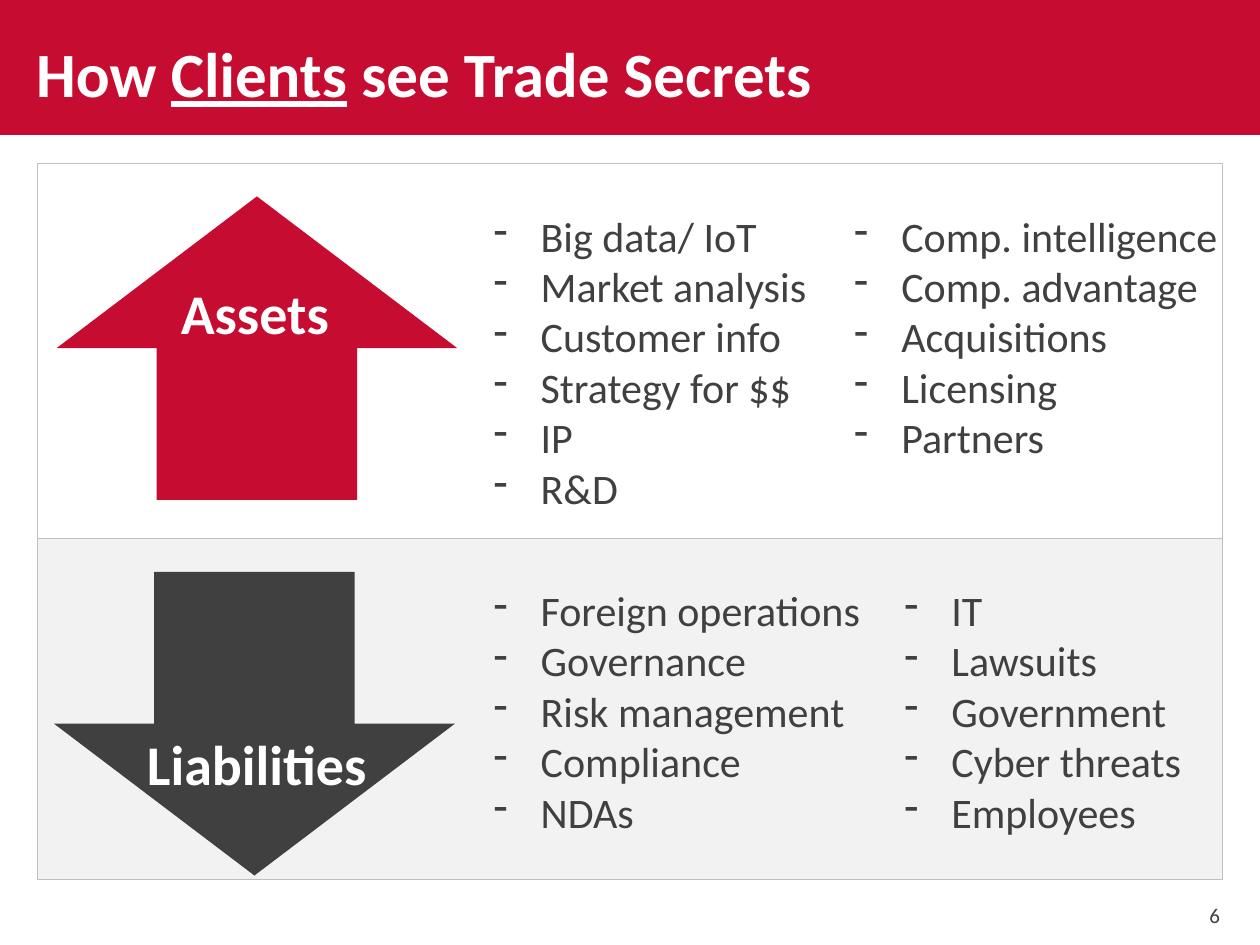
import pptx
import pptx.dml.color
import pptx.enum.shapes
import pptx.enum.text
import pptx.oxml.ns
import pptx.util
from lxml import etree

Cm, Pt = pptx.util.Cm, pptx.util.Pt
SHAPE = pptx.enum.shapes.MSO_SHAPE
ALIGN = pptx.enum.text.PP_ALIGN
ANCHOR = pptx.enum.text.MSO_ANCHOR

FONT = "Calibri"
COLORS = {"red": "C60C30", "dark": "404040", "pale": "F2F2F2",
          "border": "BFBFBF", "white": "FFFFFF"}
INDENT = Cm(0.95)

ASSETS = (["Big data/ IoT", "Market analysis", "Customer info",
           "Strategy for $$", "IP", "R&D"],
          ["Comp. intelligence", "Comp. advantage", "Acquisitions",
           "Licensing", "Partners"])
LIABILITIES = (["Foreign operations", "Governance", "Risk management",
                "Compliance", "NDAs"],
               ["IT", "Lawsuits", "Government", "Cyber threats", "Employees"])


def rgb(name):
    return pptx.dml.color.RGBColor.from_string(COLORS[name])


def add_shape(s, kind, x, y, w, h, fill=None, line=None):
    sp = s.shapes.add_shape(kind, Cm(x), Cm(y), Cm(w), Cm(h))
    sp.shadow.inherit = False
    if fill:
        sp.fill.solid()
        sp.fill.fore_color.rgb = rgb(fill)
    else:
        sp.fill.background()
    if line:
        sp.line.color.rgb = rgb(line)
        sp.line.width = Pt(0.25)
    else:
        sp.line.fill.background()
    return sp


def add_run(p, text, size=24, color="dark", bold=False, underline=False):
    r = p.add_run()
    r.text = text
    r.font.name = FONT
    r.font.size = Pt(size)
    r.font.bold = bold
    r.font.underline = underline
    r.font.color.rgb = rgb(color)


def add_box(s, x, y, w, h, anchor=ANCHOR.TOP):
    tf = s.shapes.add_textbox(Cm(x), Cm(y), Cm(w), Cm(h)).text_frame
    tf.word_wrap = True
    tf.vertical_anchor = anchor
    return tf


def add_label(s, text, x, y, w, h):
    p = add_box(s, x, y, w, h).paragraphs[0]
    p.alignment = ALIGN.CENTER
    add_run(p, text, size=32, color="white", bold=True)


def add_dash_list(s, items, x, y, w, h):
    tf = add_box(s, x, y, w, h)
    for i, item in enumerate(items):
        p = tf.add_paragraph() if i else tf.paragraphs[0]
        add_run(p, item)
        pPr = p._p.get_or_add_pPr()
        pPr.set("marL", str(INDENT))
        pPr.set("indent", str(-INDENT))
        bu = etree.SubElement(pPr, pptx.oxml.ns.qn("a:buChar"))
        bu.set("char", "-")


def main():
    prs = pptx.Presentation()
    prs.slide_width, prs.slide_height = Cm(25.4), Cm(19.05)
    s = prs.slides.add_slide(prs.slide_layouts[6])

    # Title band
    add_shape(s, SHAPE.RECTANGLE, 0, 0, 25.4, 2.72, fill="red")
    p = add_box(s, 0.48, 0.58, 27.38, 1.8).paragraphs[0]
    for text, underline in (("How ", False), ("Clients", True),
                            (" see Trade Secrets", False)):
        add_run(p, text, size=36, color="white", bold=True,
                underline=underline)

    # Panels
    add_shape(s, SHAPE.RECTANGLE, 0.76, 10.85, 23.88, 6.88,
              fill="pale", line="border")
    add_shape(s, SHAPE.RECTANGLE, 0.76, 3.3, 23.88, 7.55, line="border")

    # Lists
    add_dash_list(s, ASSETS[0], 9.7, 4.11, 7.26, 6.4)
    add_dash_list(s, ASSETS[1], 16.97, 4.11, 11.46, 5.38)
    add_dash_list(s, LIABILITIES[0], 9.7, 11.66, 11.46, 5.38)
    add_dash_list(s, LIABILITIES[1], 17.98, 11.66, 11.46, 5.38)

    # Arrows with labels
    add_shape(s, SHAPE.DOWN_ARROW, 1.09, 11.53, 8.08, 6.12, fill="dark")
    add_shape(s, SHAPE.UP_ARROW, 1.14, 3.96, 8.08, 6.12, fill="red")
    add_label(s, "Assets", 2.41, 5.49, 5.46, 1.63)
    add_label(s, "Liabilities", 1.14, 14.58, 8.08, 1.63)

    # Page number
    tf = add_box(s, 24.13, 17.93, 3.66, 1.02, anchor=ANCHOR.MIDDLE)
    add_run(tf.paragraphs[0], "6", size=12)

    prs.save("out.pptx")


if __name__ == "__main__":
    main()
